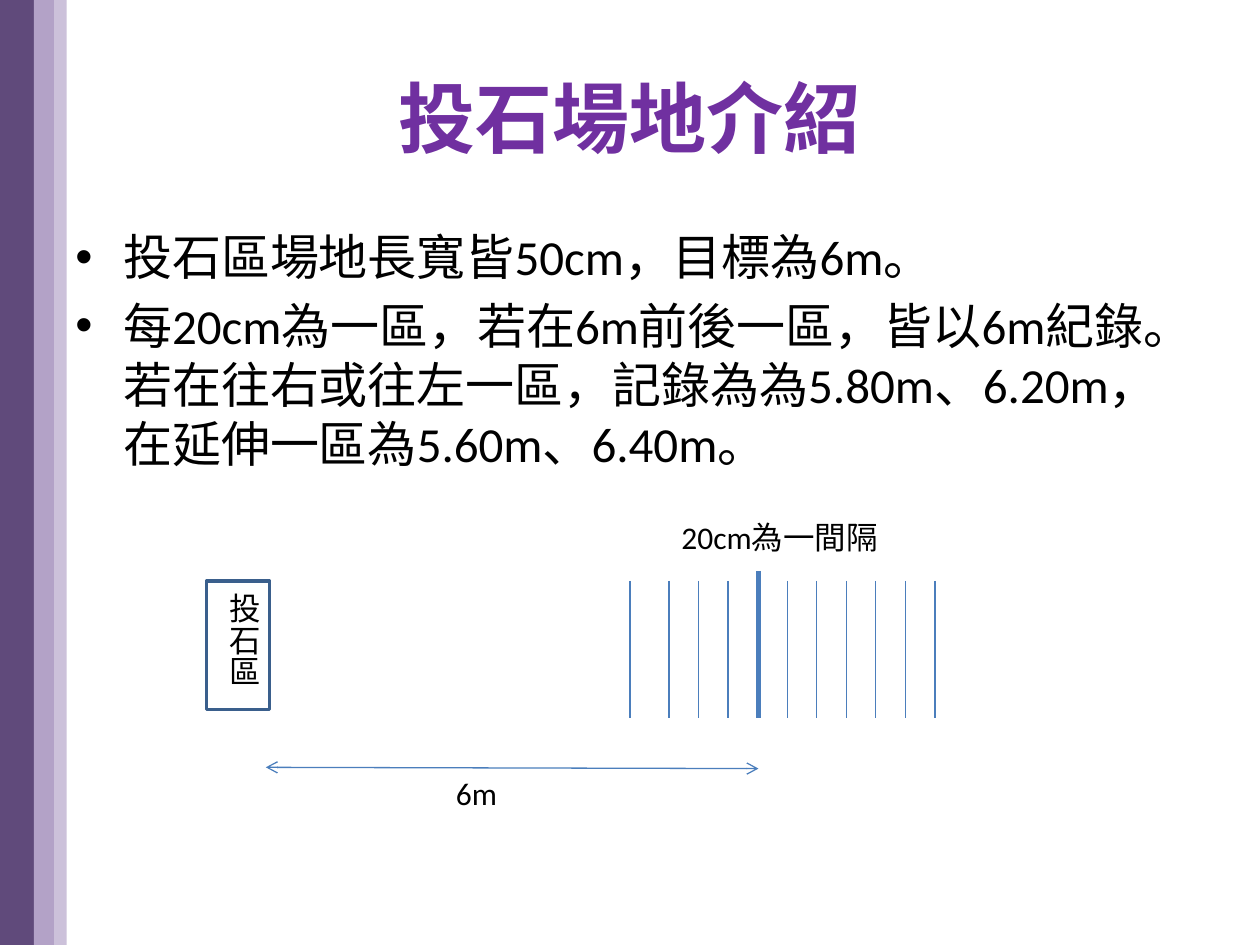
from dataclasses import dataclass

from lxml.etree import SubElement
from pptx import Presentation
from pptx.dml.color import RGBColor
from pptx.enum.shapes import MSO_CONNECTOR, MSO_SHAPE
from pptx.enum.text import MSO_ANCHOR, PP_ALIGN
from pptx.oxml.ns import qn
from pptx.util import Inches, Pt

COLORS = {
    "dark_bar": "604A7B",
    "middle_bar": "B3A2C7",
    "light_bar": "CCC1DA",
    "title": "7030A0",
    "text": "000000",
    "zone": "3A5F8C",
    "line": "4B7EBC",
}
LATIN_FONT = "Calibri"
ASIAN_FONT = "Noto Sans CJK SC"


@dataclass
class Bar:
    left: float
    width: float
    color: str


@dataclass
class Label:
    text: str
    left: float
    top: float
    width: float
    height: float


BARS = [
    Bar(0, 0.28, "dark_bar"),
    Bar(0.27, 0.16, "middle_bar"),
    Bar(0.43, 0.1, "light_bar"),
]
RULES = [
    "投石區場地長寬皆50cm，目標為6m。",
    "每20cm為一區，若在6m前後一區，皆以6m紀錄。若在往右或往左一區，"
    "記錄為為5.80m、6.20m，在延伸一區為5.60m、6.40m。",
]
LABELS = [
    Label("6m", 3.52, 6.09, 0.55, 0.4),
    Label("20cm為一間隔", 5.31, 4.06, 2.11, 0.4),
]
TARGET_X = 6.02
FIRST_MARK, LAST_MARK, MARK_GAPS = 5.31, 7.42, 9
TARGET_INDEX = 3
OUTER_MARK = 5.0
MARK_TOP, MARK_BOTTOM = 4.61, 5.7


def rgb(name: str) -> RGBColor:
    return RGBColor.from_string(COLORS[name])


def add_run(para, text: str, size: float, color: str = "text",
            font: str = LATIN_FONT, bold: bool = False) -> None:
    span = para.add_run()
    span.text = text
    span.font.size = Pt(size)
    span.font.bold = bold
    span.font.name = font
    span.font.color.rgb = rgb(color)
    SubElement(span.font._element, qn("a:ea"), typeface=ASIAN_FONT)


def add_rectangle(page, left: float, top: float, width: float, height: float):
    box = page.shapes.add_shape(MSO_SHAPE.RECTANGLE, Inches(left), Inches(top),
                                Inches(width), Inches(height))
    box.shadow.inherit = False
    return box


def add_bar(page, bar: Bar) -> None:
    box = add_rectangle(page, bar.left, 0, bar.width, 7.5)
    box.fill.solid()
    box.fill.fore_color.rgb = rgb(bar.color)
    box.line.fill.background()


def add_text_box(page, left: float, top: float, width: float, height: float):
    box = page.shapes.add_textbox(Inches(left), Inches(top), Inches(width), Inches(height))
    box.text_frame.word_wrap = True
    return box.text_frame


def add_label(page, label: Label) -> None:
    frame = add_text_box(page, label.left, label.top, label.width, label.height)
    add_run(frame.paragraphs[0], label.text, 18)


def add_line(page, x1: float, y1: float, x2: float, y2: float,
             weight: float = 0.75, arrows: bool = False) -> None:
    line = page.shapes.add_connector(MSO_CONNECTOR.STRAIGHT, Inches(x1), Inches(y1),
                                     Inches(x2), Inches(y2))
    line.line.color.rgb = rgb("line")
    line.line.width = Pt(weight)
    if arrows:
        for end in ("a:headEnd", "a:tailEnd"):
            SubElement(line.line._get_or_add_ln(), qn(end), type="arrow")
    SubElement(line._element.spPr, qn("a:effectLst"))


def add_title(page, text: str) -> None:
    title = page.shapes.title
    title.left, title.top = Inches(0.5), Inches(0.3)
    title.width, title.height = Inches(9), Inches(1.25)
    title.text_frame.vertical_anchor = MSO_ANCHOR.MIDDLE
    para = title.text_frame.paragraphs[0]
    para.alignment = PP_ALIGN.CENTER
    add_run(para, text, 44, "title", ASIAN_FONT, bold=True)


def add_rules(page) -> None:
    frame = add_text_box(page, 0.5, 1.75, 9, 4.95)
    for index, rule in enumerate(RULES):
        para = frame.add_paragraph() if index else frame.paragraphs[0]
        if index:
            para.space_before = Pt(5.6)
        properties = para._p.get_or_add_pPr()
        properties.set("marL", str(Inches(0.38)))
        properties.set("indent", str(-Inches(0.38)))
        SubElement(properties, qn("a:buFont"), typeface="Arial")
        SubElement(properties, qn("a:buChar"), char="•")
        add_run(para, rule, 28)


def add_throwing_zone(page) -> None:
    zone = add_rectangle(page, 1.64, 4.61, 0.5, 1.02)
    zone.fill.background()
    zone.line.color.rgb = rgb("zone")
    zone.line.width = Pt(2)
    frame = zone.text_frame
    frame.vertical_anchor = MSO_ANCHOR.TOP
    frame._txBody.bodyPr.set("vert", "eaVert")
    para = frame.paragraphs[0]
    para.alignment = PP_ALIGN.LEFT
    add_run(para, "投石區", 18)


def add_distance_marks(page) -> None:
    gap = (LAST_MARK - FIRST_MARK) / MARK_GAPS
    marks = [FIRST_MARK + gap * index for index in range(MARK_GAPS + 1)
             if index != TARGET_INDEX]
    for x in [OUTER_MARK, *marks]:
        add_line(page, x, MARK_TOP, x, MARK_BOTTOM)
    add_line(page, TARGET_X, 4.53, TARGET_X, MARK_BOTTOM, weight=3)


def main() -> None:
    deck = Presentation()
    deck.slide_width, deck.slide_height = Inches(10), Inches(7.5)
    page = deck.slides.add_slide(deck.slide_layouts[5])
    for bar in BARS:
        add_bar(page, bar)
    add_title(page, "投石場地介紹")
    add_rules(page)
    add_throwing_zone(page)
    add_line(page, 2.11, 6.09, TARGET_X, 6.1, arrows=True)
    add_distance_marks(page)
    for label in LABELS:
        add_label(page, label)
    deck.save("out.pptx")


if __name__ == "__main__":
    main()
